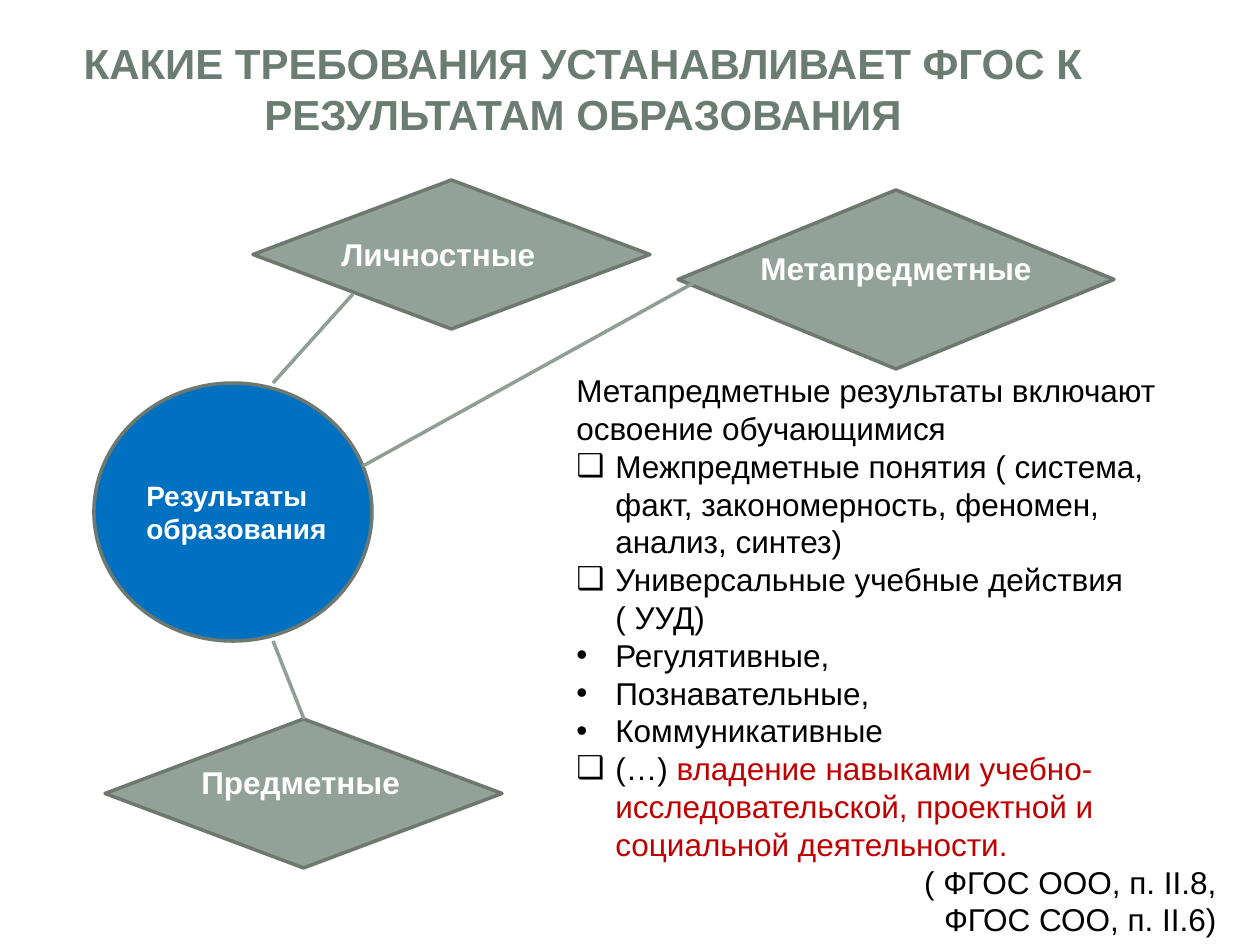
from pptx import Presentation
from pptx.dml.color import RGBColor
from pptx.enum.shapes import MSO_CONNECTOR, MSO_SHAPE
from pptx.enum.text import MSO_ANCHOR, PP_ALIGN
from pptx.oxml.ns import qn
from pptx.util import Emu, Pt
from lxml.etree import SubElement

WHITE = RGBColor(0xFF, 0xFF, 0xFF)
BLACK = RGBColor(0x00, 0x00, 0x00)
RED = RGBColor(0xC0, 0x00, 0x00)
BLUE = RGBColor(0x00, 0x70, 0xC0)
SAGE = RGBColor(0x93, 0xA2, 0x99)
OUTLINE = RGBColor(0x6D, 0x78, 0x71)
LINK = RGBColor(0x8F, 0x9F, 0x96)
TITLE = RGBColor(0x6B, 0x7D, 0x72)
PX = 914400 / 126
INDENT = round(39 * PX)


def px(*lengths):
    return [Emu(round(n * PX)) for n in lengths]


def add_text(box, paragraphs, size, bold=False, align=PP_ALIGN.LEFT):
    """Add a text box; each paragraph is a list of (text, colour) runs."""
    tf = s.shapes.add_textbox(*px(*box)).text_frame
    tf.word_wrap = True
    for i, runs in enumerate(paragraphs):
        p = tf.paragraphs[0] if i == 0 else tf.add_paragraph()
        p.alignment = align
        for text, color in runs:
            r = p.add_run()
            r.text = text
            r.font.name = "Arial"
            r.font.size = Pt(size)
            r.font.bold = bold
            r.font.color.rgb = color
    return tf


prs = Presentation()
prs.slide_width, prs.slide_height = px(1260, 945)
s = prs.slides.add_slide(prs.slide_layouts[6])

title = "КАКИЕ ТРЕБОВАНИЯ УСТАНАВЛИВАЕТ ФГОС К РЕЗУЛЬТАТАМ ОБРАЗОВАНИЯ"
tf = add_text((14, 16, 1138, 144), [[(title, TITLE)]], 24, True, PP_ALIGN.CENTER)
tf.vertical_anchor = MSO_ANCHOR.MIDDLE

# Circle and the three kinds of results
for kind, box, fill in [
    (MSO_SHAPE.OVAL, (94, 383, 278, 258), BLUE),
    (MSO_SHAPE.FLOWCHART_DECISION, (253, 180, 397, 149), SAGE),
    (MSO_SHAPE.FLOWCHART_DECISION, (678, 190, 436, 179), SAGE),
    (MSO_SHAPE.FLOWCHART_DECISION, (105, 719, 397, 149), SAGE),
]:
    sp = s.shapes.add_shape(kind, *px(*box))
    sp.shadow.inherit = False
    sp.fill.solid()
    sp.fill.fore_color.rgb = fill
    sp.line.color.rgb = OUTLINE
    sp.line.width = Pt(2)

for ends in [(273, 383, 353, 294), (363, 466, 699, 280), (273, 641, 304, 719)]:
    line = s.shapes.add_connector(MSO_CONNECTOR.STRAIGHT, *px(*ends))
    line.line.color.rgb = LINK
    line.line.width = Pt(2)
    SubElement(line._element.spPr, qn("a:effectLst"))

for text, box, size in [
    ("Результаты образования", (134, 472, 238, 81), 16),
    ("Личностные", (329, 229, 255, 50), 18),
    ("Метапредметные", (748, 243, 328, 50), 18),
    ("Предметные", (189, 757, 267, 50), 18),
]:
    add_text(box, [[(text, WHITE)]], size, True)

# Explanation of the meta-subject results: bullet, runs
items = [
    (None, [("Метапредметные результаты включают освоение обучающимися", BLACK)]),
    ("❑", [("Межпредметные понятия ( система, факт, закономерность, "
            "феномен, анализ, синтез)", BLACK)]),
    ("❑", [("Универсальные учебные действия ( УУД)", BLACK)]),
    ("•", [("Регулятивные,", BLACK)]),
    ("•", [("Познавательные,", BLACK)]),
    ("•", [("Коммуникативные", BLACK)]),
    ("❑", [("(…) ", BLACK),
           ("владение навыками учебно-исследовательской, проектной и "
            "социальной деятельности.", RED)]),
    (None, [("( ФГОС ООО, п. II.8,", BLACK)]),
    (None, [("ФГОС СОО, п. II.6)", BLACK)]),
]
tf = add_text((564, 365, 665, 580), [runs for _, runs in items], 18)
for p, (bullet, _) in zip(tf.paragraphs, items):
    if bullet:
        pPr = p._p.get_or_add_pPr()
        pPr.set("marL", str(INDENT))
        pPr.set("indent", str(-INDENT))
        SubElement(pPr, qn("a:buFont"), typeface="Arial")
        SubElement(pPr, qn("a:buChar"), char=bullet)
for p in tf.paragraphs[-2:]:
    p.alignment = PP_ALIGN.RIGHT

prs.save("out.pptx")
